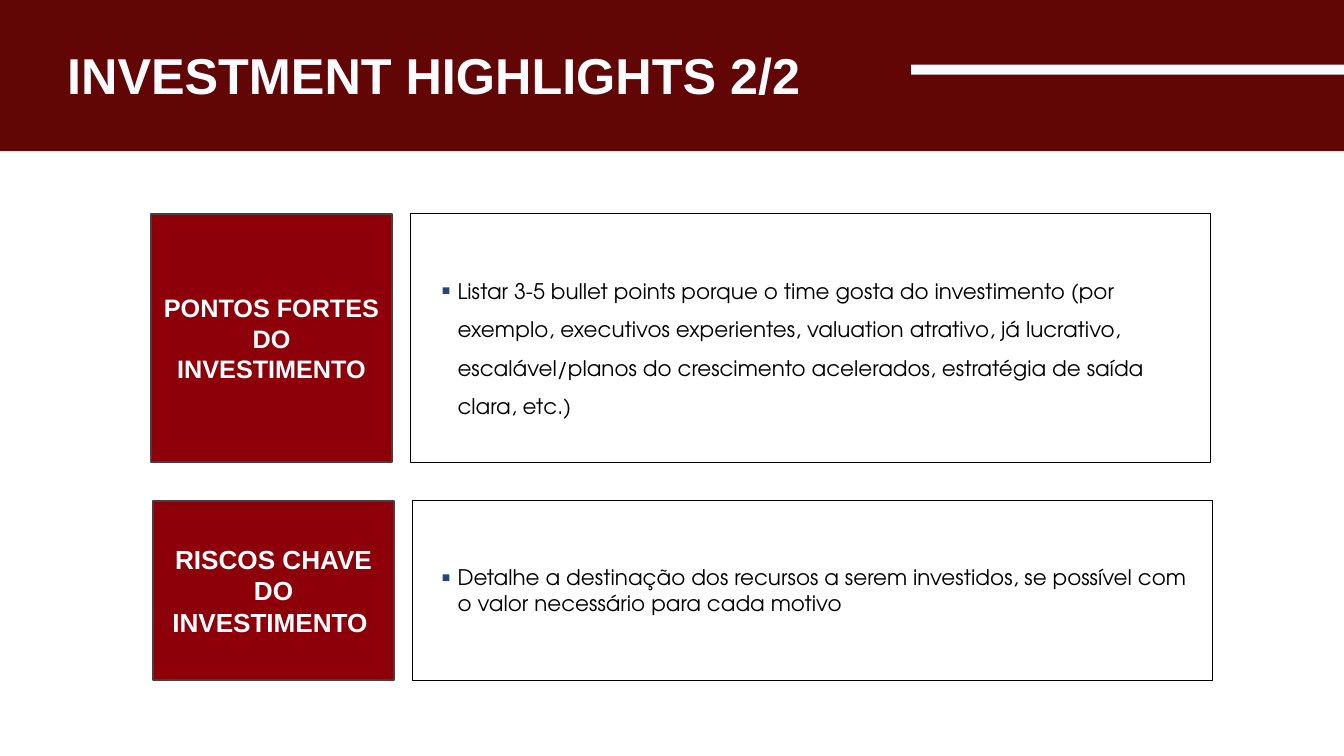
from lxml import etree
from pptx import Presentation
from pptx.dml.color import RGBColor
from pptx.enum.shapes import MSO_SHAPE
from pptx.enum.text import MSO_ANCHOR, PP_ALIGN
from pptx.oxml.ns import qn
from pptx.util import Inches, Pt

RECTANGLE = MSO_SHAPE.RECTANGLE
TOP, MIDDLE = MSO_ANCHOR.TOP, MSO_ANCHOR.MIDDLE
LEFT, CENTER = PP_ALIGN.LEFT, PP_ALIGN.CENTER

WIDTH, HEIGHT = 20, 11.25
BAND = HEIGHT / 5
LABEL_WIDTH, DETAIL_WIDTH = 3.58, 11.91
DETAIL_OFFSET = 3.85
TEXT_LEFT = 6.47

deck = Presentation()
deck.slide_width, deck.slide_height = Inches(WIDTH), Inches(HEIGHT)
page = deck.slides.add_slide(deck.slide_layouts[6])


def add_box(area, fill=None, line=None, weight=0.75):
    box = page.shapes.add_shape(RECTANGLE, *map(Inches, area))
    box.shadow.inherit = False
    if fill:
        box.fill.solid()
        box.fill.fore_color.rgb = RGBColor.from_string(fill)
    else:
        box.fill.background()
    if line:
        box.line.color.rgb = RGBColor.from_string(line)
        box.line.width = Pt(weight)
    else:
        box.line.fill.background()
    return box


def write(box, text, color, font, frame, spacing):
    box.text_frame.word_wrap = True
    para = box.text_frame.paragraphs[0]
    span = para.add_run()
    span.text = text
    span.font.color.rgb = RGBColor.from_string(color)
    for target, values in ((span.font, font), (box.text_frame, frame), (para, spacing)):
        for name, value in values.items():
            setattr(target, name, value)
    return para


# Header band, title and rule
add_box((0, 0, WIDTH, BAND), "610505")
title = page.shapes.add_textbox(*map(Inches, (1, 0.65, 11.84, 0.93)))
write(title, "INVESTMENT HIGHLIGHTS 2/2", "F9FBFF",
      {"name": "Arial", "size": Pt(54), "bold": True},
      {"margin_left": 0, "margin_right": 0, "margin_top": Inches(0.01),
       "margin_bottom": 0, "vertical_anchor": TOP},
      {"alignment": LEFT, "space_before": Pt(0.9)})
add_box((13.56, 0.96, WIDTH - 13.56, 0.15), "F9FBFF")

# Rows: left, top, height, label, label size, text top, width, height, line spacing, text
rows = [
    (2.25, 3.18, 3.7, "PONTOS FORTES DO INVESTIMENTO", 27, 3.89, 10.95, 2.35, 1.5,
     "Listar 3-5 bullet points porque o time gosta do investimento (por exemplo, "
     "executivos experientes, valuation atrativo, já lucrativo, escalável/planos do "
     "crescimento acelerados, estratégia de saída clara, etc.)"),
    (2.28, 7.45, 2.67, "RISCOS CHAVE DO INVESTIMENTO ", 28, 8.35, 11.59, 0.87, 1.0,
     "Detalhe a destinação dos recursos a serem investidos, se possível com o valor "
     "necessário para cada motivo"),
]
for left, top, height, label, size, text_top, text_width, text_height, leading, text in rows:
    # Outlined panel and label
    add_box((left + DETAIL_OFFSET, top, DETAIL_WIDTH, height), line="000000")
    heading = add_box((left, top, LABEL_WIDTH, height), "8E0009", "404040", 2)
    write(heading, label, "FFFFFF", {"name": "Arial", "size": Pt(size), "bold": True},
          {"vertical_anchor": MIDDLE}, {"alignment": CENTER})

    # Bulleted detail
    detail = page.shapes.add_textbox(
        *map(Inches, (TEXT_LEFT, text_top, text_width, text_height)))
    para = write(detail, text, "000000", {"name": "TeX Gyre Adventor", "size": Pt(23)},
                 {"vertical_anchor": TOP},
                 {"alignment": LEFT, "line_spacing": leading, "space_before": Pt(7)})
    props = para._p.get_or_add_pPr()
    props.set("marL", str(Inches(0.24)))
    props.set("indent", str(-Inches(0.24)))
    bullet_color = etree.SubElement(props, qn("a:buClr"))
    etree.SubElement(bullet_color, qn("a:srgbClr"), val="1F497D")
    etree.SubElement(props, qn("a:buSzPct"), val="125000")
    etree.SubElement(props, qn("a:buFont"), typeface="Arial")
    etree.SubElement(props, qn("a:buChar"), char="▪")

deck.save("out.pptx")
